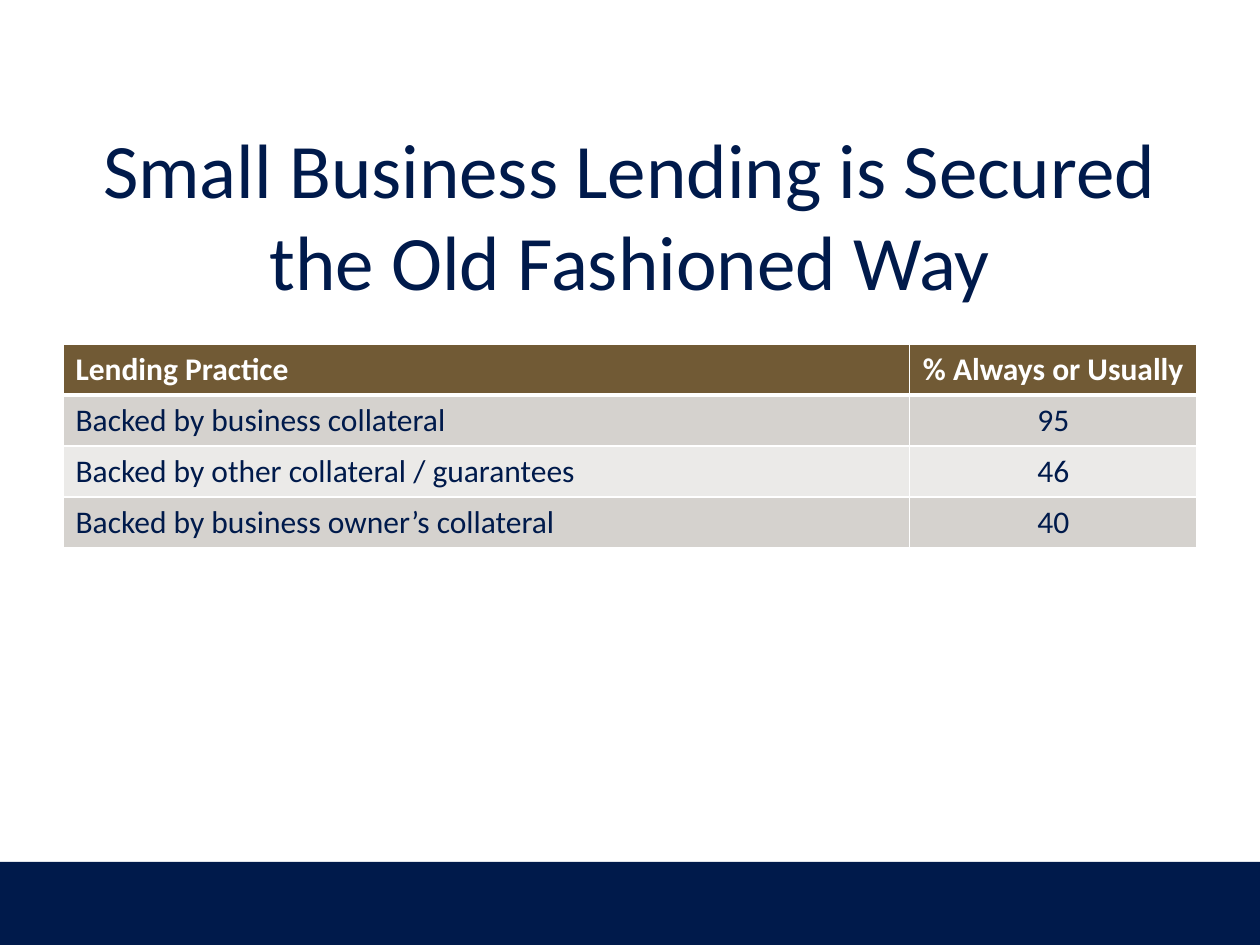
import pptx
import pptx.util
import pptx.dml.color
import pptx.enum.shapes
import pptx.enum.text
import pptx.oxml
import pptx.oxml.ns

Inches = pptx.util.Inches
ALIGN = pptx.enum.text.PP_ALIGN
MIDDLE = pptx.enum.text.MSO_ANCHOR.MIDDLE
NAVY, WHITE, BROWN = "001A4B", "FFFFFF", "715A35"
BANDS = ["D5D2CE", "EBEAE8"]
ROWS = [
    ("Lending Practice", "% Always or Usually"),
    ("Backed by business collateral", "95"),
    ("Backed by other collateral / guarantees", "46"),
    ("Backed by business owner’s collateral", "40"),
]


def color(value):
    return pptx.dml.color.RGBColor.from_string(value)


def paint(target, value):
    target.fill.solid()
    target.fill.fore_color.rgb = color(value)


def write(text_frame, text, alignment, text_color, **formats):
    paragraph = text_frame.paragraphs[0]
    paragraph.alignment = alignment
    run = paragraph.add_run()
    run.text = text
    for name, value in {"name": "Calibri", **formats}.items():
        setattr(run.font, name, value)
    run.font.color.rgb = color(text_color)


def set_borders(cell, widths):
    properties = cell._tc.get_or_add_tcPr()
    for index, (side, width) in enumerate(widths.items()):
        line = pptx.oxml.parse_xml(
            f'<a:{side} {pptx.oxml.ns.nsdecls("a")} w="{pptx.util.Pt(width)}">'
            f'<a:solidFill><a:srgbClr val="{WHITE}"/></a:solidFill></a:{side}>'
        )
        properties.insert(index, line)


def add_footer_band(slide, left, top, width, height):
    shape = slide.shapes.add_shape(
        pptx.enum.shapes.MSO_SHAPE.RECTANGLE, left, top, width, height
    )
    shape.shadow.inherit = False
    paint(shape, NAVY)
    shape.line.fill.background()


def add_title(slide, left, top, width, height):
    text_frame = slide.shapes.add_textbox(left, top, width, height).text_frame
    for name, value in {"word_wrap": True, "vertical_anchor": MIDDLE}.items():
        setattr(text_frame, name, value)
    write(
        text_frame,
        "Small Business Lending is Secured the Old Fashioned Way",
        ALIGN.CENTER,
        NAVY,
        size=pptx.util.Pt(44),
    )


def add_lending_table(slide, left, top, width, height):
    table = slide.shapes.add_table(len(ROWS), 2, left, top, width, height).table
    value_width = Inches(2.28)
    table.columns[0].width = width - value_width
    table.columns[1].width = value_width
    for row_index, row in enumerate(ROWS):
        header = row_index == 0
        for column_index, text in enumerate(row):
            cell = table.cell(row_index, column_index)
            paint(cell, BROWN if header else BANDS[(row_index - 1) % 2])
            write(
                cell.text_frame,
                text,
                ALIGN.CENTER if column_index else ALIGN.LEFT,
                WHITE if header else NAVY,
                size=pptx.util.Pt(18),
                bold=header,
            )
            top_width = 3 if row_index == 1 else 1
            bottom_width = 3 if header else 1
            set_borders(
                cell, {"lnL": 1, "lnR": 1, "lnT": top_width, "lnB": bottom_width}
            )


def main():
    presentation = pptx.Presentation()
    presentation.slide_width = Inches(10)
    presentation.slide_height = Inches(7.5)
    slide = presentation.slides.add_slide(presentation.slide_layouts[6])
    paint(slide.background, WHITE)
    add_footer_band(slide, 0, Inches(6.84), Inches(10), Inches(0.66))
    add_title(slide, Inches(0.5), Inches(1.07), Inches(9), Inches(1.25))
    add_lending_table(slide, Inches(0.5), Inches(2.73), Inches(9), Inches(1.62))
    presentation.save("out.pptx")


if __name__ == "__main__":
    main()
